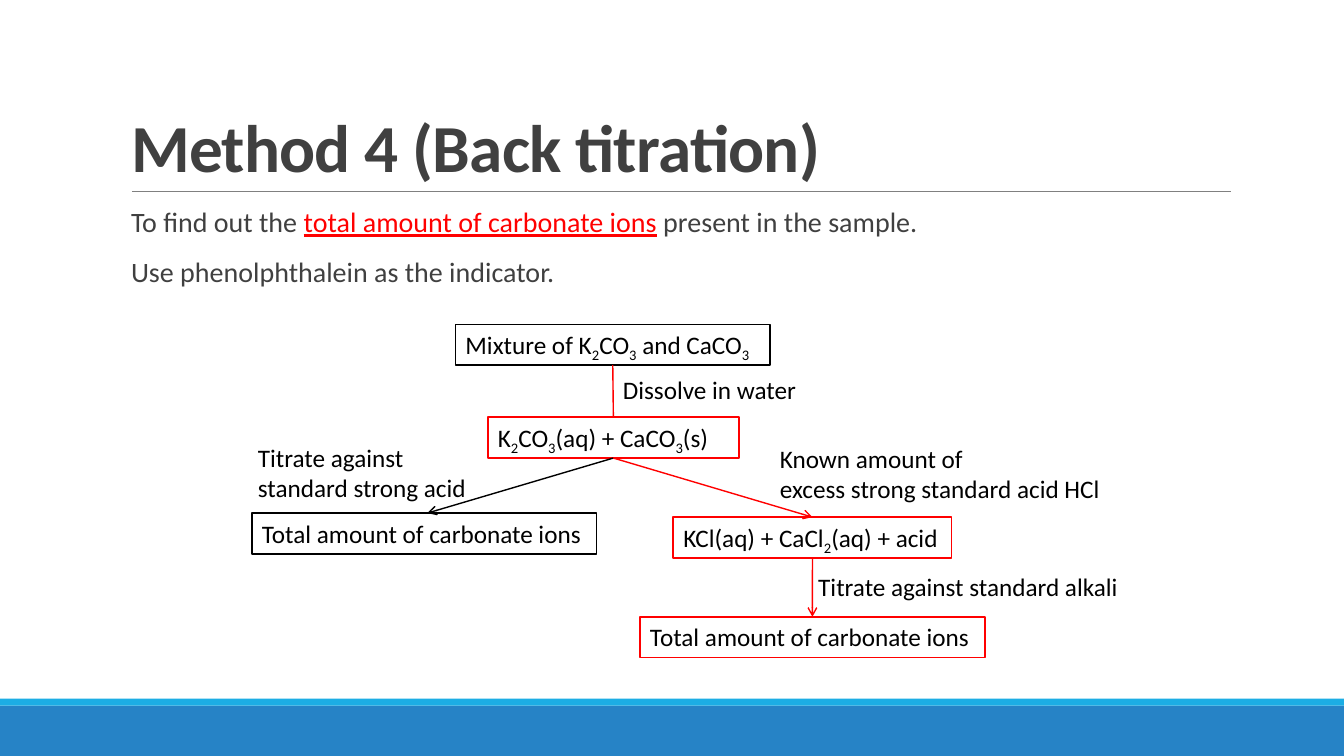
from lxml import etree
from pptx import Presentation
from pptx.dml.color import RGBColor
from pptx.enum import shapes, text
from pptx.oxml import ns
from pptx.util import Pt

BLACK = RGBColor(0x00, 0x00, 0x00)
WHITE = RGBColor(0xFF, 0xFF, 0xFF)
RED = RGBColor(0xFF, 0x00, 0x00)
DARK = RGBColor(0x40, 0x40, 0x40)
GRAY = RGBColor(0x80, 0x80, 0x80)
BLUE = RGBColor(0x26, 0x83, 0xC6)
CYAN = RGBColor(0x1C, 0xAD, 0xE4)
FONT = "Calibri"
HIGH = 29.08
TOP, BOTTOM = 0, 2


def style(para, size, color):
    para.font.name = FONT
    para.font.size = Pt(size)
    para.font.color.rgb = color


def place(shape, left, top, width, height):
    shape.left, shape.top = Pt(left), Pt(top)
    shape.width, shape.height = Pt(width), Pt(height)


def band(slide, top, height, color):
    bar = slide.shapes.add_shape(
        shapes.MSO_SHAPE.RECTANGLE, 0, Pt(top), Pt(960), Pt(height))
    bar.shadow.inherit = False
    bar.fill.solid()
    bar.fill.fore_color.rgb = color
    bar.line.fill.background()


def line(slide, start, end, color, width=1, arrow=False):
    """Join two ends, each an (x, y) point or a (box, side) pair."""
    link = slide.shapes.add_connector(
        shapes.MSO_CONNECTOR.STRAIGHT, 0, 0, 0, 0)
    if isinstance(start[0], (int, float)):
        link.begin_x, link.begin_y = map(Pt, start)
    else:
        link.begin_connect(*start)
    if isinstance(end[0], (int, float)):
        link.end_x, link.end_y = map(Pt, end)
    else:
        link.end_connect(*end)
    link.line.color.rgb = color
    link.line.width = Pt(width)
    if arrow:
        tail = etree.SubElement(link.line._get_or_add_ln(), ns.qn("a:tailEnd"))
        tail.set("type", "arrow")
    etree.SubElement(link._element.spPr, ns.qn("a:effectLst"))


def write(para, words):
    """Add runs; the character after each underscore is a subscript."""
    first, *rest = words.split("_")
    para.add_run().text = first
    for part in rest:
        sub = para.add_run()
        sub.text = part[0]
        sub._r.get_or_add_rPr().set("baseline", "-25000")
        if part[1:]:
            para.add_run().text = part[1:]


def label(slide, left, top, width, *rows, wrap=False):
    note = slide.shapes.add_textbox(
        Pt(left), Pt(top), Pt(width), Pt(HIGH + 21.8 * (len(rows) - 1)))
    frame = note.text_frame
    frame.word_wrap = wrap
    for i, row in enumerate(rows):
        para = frame.add_paragraph() if i else frame.paragraphs[0]
        style(para, 18, BLACK)
        write(para, row)
    return note


def box(slide, left, top, width, words, color):
    step = label(slide, left, top, width, words, wrap=True)
    step.fill.solid()
    step.fill.fore_color.rgb = WHITE
    step.line.color.rgb = color
    step.line.width = Pt(1.25)
    return step


def title(slide, words):
    head = slide.shapes.title
    place(head, 86.4, 22.6, 792, 114.2)
    frame = head.text_frame
    frame.auto_size = text.MSO_AUTO_SIZE.NONE
    frame.vertical_anchor = text.MSO_ANCHOR.BOTTOM
    para = frame.paragraphs[0]
    style(para, 48, DARK)
    para.font.bold = True
    para.alignment = text.PP_ALIGN.LEFT
    para.line_spacing = 0.85
    run = para.add_run()
    run.text = words
    run._r.get_or_add_rPr().set("spc", "-50")


def body(slide, rows):
    """Fill the list; every second part of a row is red and underlined."""
    hold = slide.placeholders[1]
    place(hold, 86.4, 145.4, 792, 76.3)
    frame = hold.text_frame
    frame.auto_size = text.MSO_AUTO_SIZE.NONE
    frame.margin_left, frame.margin_right = Pt(7.2), 0
    for i, row in enumerate(rows):
        para = frame.add_paragraph() if i else frame.paragraphs[0]
        para.line_spacing = 0.9
        para.space_before, para.space_after = Pt(12), Pt(2)
        props = para._p.get_or_add_pPr()
        props.set("marL", "0")
        props.set("indent", "0")
        etree.SubElement(props, ns.qn("a:buNone"))
        style(para, 20, DARK)
        for j, part in enumerate(row):
            run = para.add_run()
            run.text = part
            if j % 2:
                run.font.color.rgb = RED
                run.font.underline = True


def chart(slide):
    total = "Total amount of carbonate ions"
    mix = box(slide, 325.4, 231.8, 224.6, "Mixture of K_2CO_3 and CaCO_3", BLACK)
    water = box(slide, 348.5, 298.1, 179.3, "K_2CO_3(aq) + CaCO_3(s)", RED)
    box(slide, 180, 366.5, 246.2, total, BLACK)
    acid = box(slide, 481, 369.4, 198.7, "KCl(aq) + CaCl_2(aq) + acid", RED)
    last = box(slide, 457.2, 440.6, 246.2, total, RED)

    line(slide, (mix, BOTTOM), (water, TOP), RED)
    line(slide, (water, BOTTOM), (305.3, 366.5), BLACK, arrow=True)
    line(slide, (water, BOTTOM), (acid, TOP), RED, arrow=True)
    line(slide, (acid, BOTTOM), (last, TOP), RED, arrow=True)

    label(slide, 437.8, 263.5, 164.9, "Dissolve in water", wrap=True)
    label(slide, 177.1, 312.5, 164.9, "Titrate against", "standard strong acid")
    label(slide, 550, 313.2, 245.5,
          "Known amount of", "excess strong standard acid HCl")
    label(slide, 577.4, 404.6, 230.4, "Titrate against standard alkali")


def main():
    deck = Presentation()
    deck.slide_width, deck.slide_height = Pt(960), Pt(540)
    slide = deck.slides.add_slide(deck.slide_layouts[1])
    band(slide, 504, 36, BLUE)
    band(slide, 499, 5, CYAN)
    line(slide, (94.3, 136.8), (879.1, 136.8), GRAY, 0.5)
    title(slide, "Method 4 (Back titration)")
    body(slide, [
        ("To find out the ", "total amount of carbonate ions",
         " present in the sample."),
        ("Use phenolphthalein as the indicator.",),
    ])
    chart(slide)
    deck.save("out.pptx")


if __name__ == "__main__":
    main()
